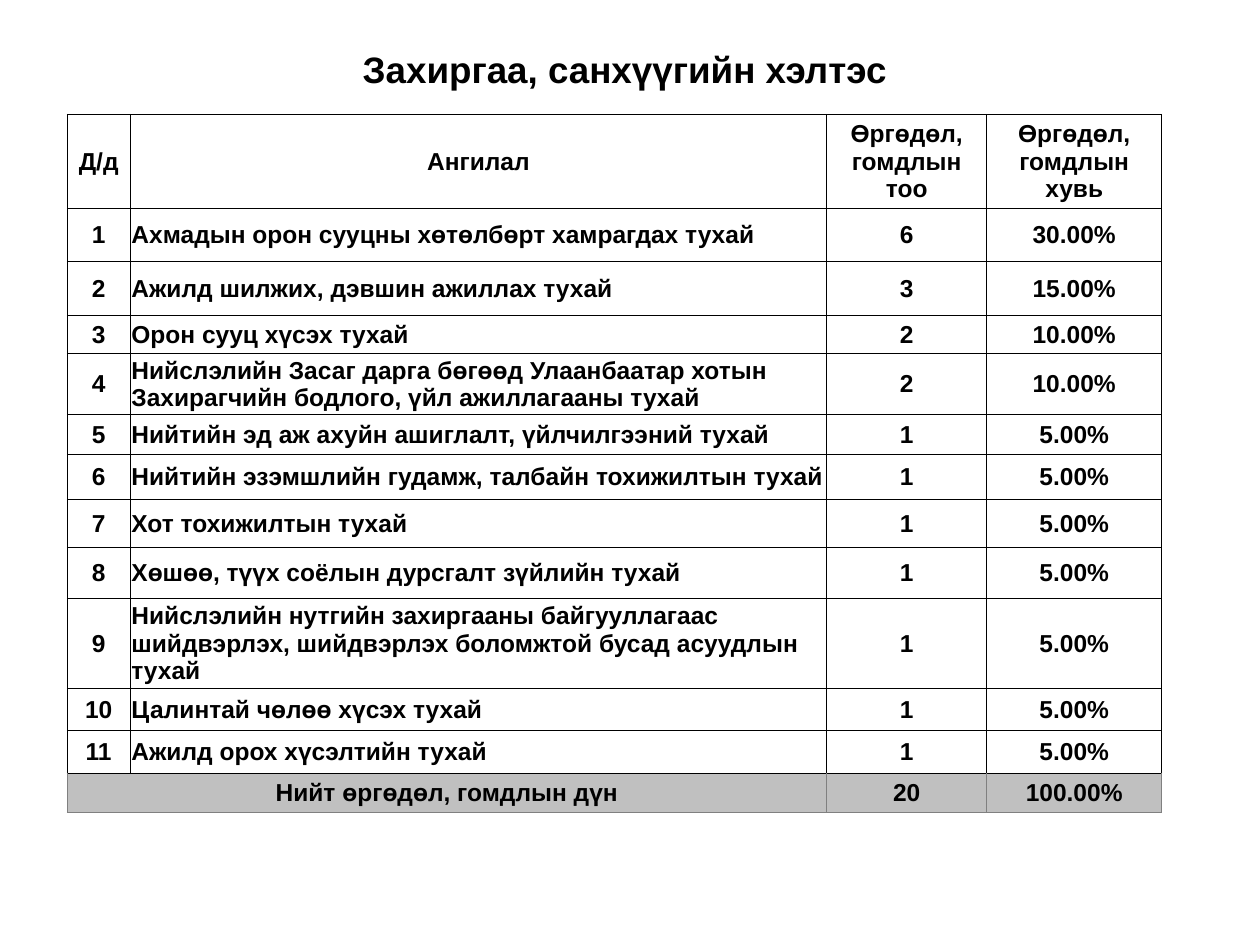
from lxml import etree
from pptx import Presentation
from pptx.dml.color import RGBColor
from pptx.enum.text import MSO_ANCHOR, MSO_AUTO_SIZE, PP_ALIGN
from pptx.oxml.ns import qn
from pptx.util import Pt

CENTER, LEFT = PP_ALIGN.CENTER, PP_ALIGN.LEFT
TOP, MIDDLE = MSO_ANCHOR.TOP, MSO_ANCHOR.MIDDLE
NO_AUTOFIT = MSO_AUTO_SIZE.NONE
TITLE_ONLY = 5

COLORS = {"text": "000000", "cell": "FFFFFF", "total": "C0C0C0",
          "grid": "000000", "total_grid": "808080"}

HEADERS = ["Д/д", "Ангилал", "Өргөдөл, гомдлын тоо", "Өргөдөл, гомдлын хувь"]
CATEGORIES = [
    ("Ахмадын орон сууцны хөтөлбөрт хамрагдах тухай", 6),
    ("Ажилд шилжих, дэвшин ажиллах тухай", 3),
    ("Орон сууц хүсэх тухай", 2),
    ("Нийслэлийн Засаг дарга бөгөөд Улаанбаатар хотын "
     "Захирагчийн бодлого, үйл ажиллагааны тухай", 2),
    ("Нийтийн эд аж ахуйн ашиглалт, үйлчилгээний тухай", 1),
    ("Нийтийн эзэмшлийн гудамж, талбайн тохижилтын тухай", 1),
    ("Хот тохижилтын тухай", 1),
    ("Хөшөө, түүх соёлын дурсгалт зүйлийн тухай", 1),
    ("Нийслэлийн нутгийн захиргааны байгууллагаас шийдвэрлэх, "
     "шийдвэрлэх боломжтой бусад асуудлын тухай", 1),
    ("Цалинтай чөлөө хүсэх тухай", 1),
    ("Ажилд орох хүсэлтийн тухай", 1),
]
COLUMN_WIDTHS = [36, 398, 91.5, 100]
ROW_HEIGHTS = [53.7, 30.3, 30.9, 21.7, 34.9, 22.9, 25.7, 27.4, 29.1, 51.4, 24, 24.6, 22.3]


class SlideBuilder:
    def __init__(self, slide, font="Arial"):
        self.slide = slide
        self.font = font

    def add_text(self, paragraph, text, size, alignment):
        paragraph.alignment = alignment
        run = paragraph.add_run()
        run.text = text
        run.font.name = self.font
        run.font.size = Pt(size)
        run.font.bold = True
        run.font.color.rgb = RGBColor.from_string(COLORS["text"])

    def title(self, text, left, top, width, height):
        shape = self.slide.shapes.title
        shape.left, shape.top = Pt(left), Pt(top)
        shape.width, shape.height = Pt(width), Pt(height)
        frame = shape.text_frame
        frame.word_wrap = True
        frame.auto_size = NO_AUTOFIT
        frame.vertical_anchor = TOP
        frame.margin_top = Pt(6.5)
        self.add_text(frame.paragraphs[0], text, 21, CENTER)

    def borders(self, cell, colors):
        """Draw the borders; colors maps each of L, R, T, B to a colour name."""
        properties = cell._tc.get_or_add_tcPr()
        for side, color in colors.items():
            line = etree.SubElement(properties, qn(f"a:ln{side}"), w=str(Pt(0.5)))
            fill = etree.SubElement(line, qn("a:solidFill"))
            etree.SubElement(fill, qn("a:srgbClr"), val=COLORS[color])

    def cell(self, cell, text, alignment, is_total):
        side_color = "total_grid" if is_total else "grid"
        self.borders(cell, {"L": side_color, "R": side_color, "T": "grid", "B": side_color})
        cell.fill.solid()
        cell.fill.fore_color.rgb = RGBColor.from_string(COLORS["total" if is_total else "cell"])
        cell.vertical_anchor = MIDDLE
        cell.margin_left = cell.margin_right = cell.margin_top = Pt(0.7)
        cell.margin_bottom = 0
        if text:
            self.add_text(cell.text_frame.paragraphs[0], text, 14, alignment)

    def table(self, rows, left, top):
        """Build a table with a header row and a total row whose first two cells are merged."""
        table = self.slide.shapes.add_table(
            len(rows), len(COLUMN_WIDTHS), Pt(left), Pt(top),
            Pt(sum(COLUMN_WIDTHS)), Pt(sum(ROW_HEIGHTS))).table
        table.first_row = table.horz_banding = False
        for column, width in zip(table.columns, COLUMN_WIDTHS):
            column.width = Pt(width)
        last = len(rows) - 1
        table.cell(last, 0).merge(table.cell(last, 1))
        for row_index, (values, height) in enumerate(zip(rows, ROW_HEIGHTS)):
            table.rows[row_index].height = Pt(height)
            for column_index, value in enumerate(values):
                is_category = column_index == 1 and row_index > 0
                self.cell(table.cell(row_index, column_index), value,
                          LEFT if is_category else CENTER, row_index == last)


def main():
    presentation = Presentation()
    presentation.slide_width, presentation.slide_height = Pt(720), Pt(540)
    slide = presentation.slides.add_slide(presentation.slide_layouts[TITLE_ONLY])
    builder = SlideBuilder(slide)
    builder.title("Захиргаа, санхүүгийн хэлтэс", 41, 20, 632, 58)

    total = sum(count for _, count in CATEGORIES)
    rows = [HEADERS]
    for number, (category, count) in enumerate(CATEGORIES, start=1):
        rows.append([str(number), category, str(count), f"{count / total:.2%}"])
    rows.append(["Нийт өргөдөл, гомдлын дүн", "", str(total), f"{1:.2%}"])
    builder.table(rows, 38.4, 65.3)
    presentation.save("out.pptx")


if __name__ == "__main__":
    main()
